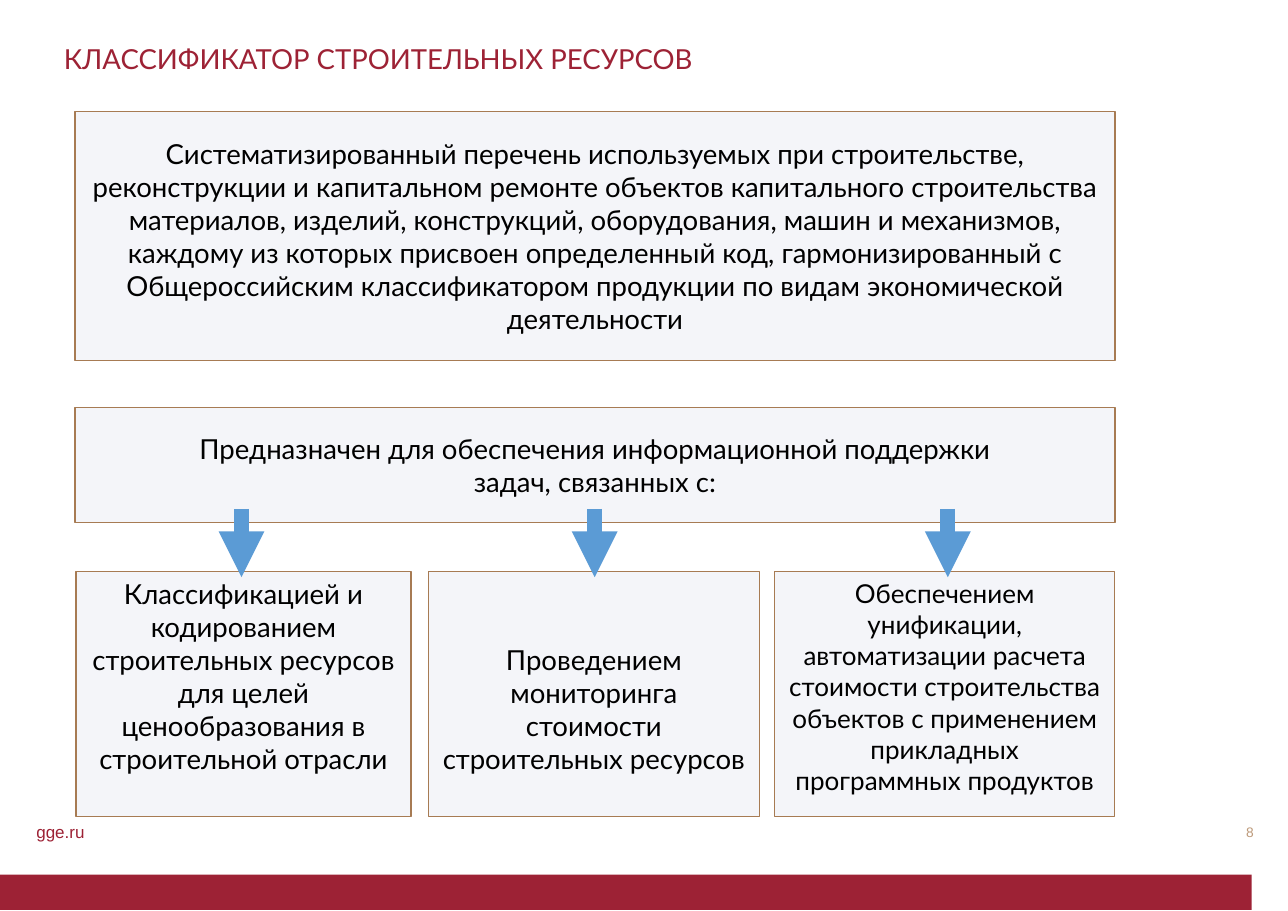
from dataclasses import dataclass

from lxml import etree
from pptx import Presentation, util as u
from pptx.dml.color import RGBColor
from pptx.enum import shapes, text
from pptx.oxml import ns

WIDTH, HEIGHT = u.Inches(11.69), u.Inches(8.27)


@dataclass(frozen=True)
class Theme:
    accent: str = "9D2235"
    panel: str = "F4F5F9"
    border: str = "A77B53"
    arrow: str = "5B9BD5"
    number: str = "BD9A7A"
    ink: str = "000000"
    white: str = "FFFFFF"
    body_font: str = "Lato"
    footer_font: str = "Arial"
    body_size: float = 18
    dense_size: float = 17
    address_size: float = 11.1
    number_size: float = 9


THEME = Theme()


@dataclass(frozen=True)
class Area:
    """A rectangle in percent of the slide's width and height."""
    left: float
    top: float
    width: float
    height: float

    def emu(self) -> tuple:
        return (share_x(self.left), share_y(self.top),
                share_x(self.width), share_y(self.height))


@dataclass(frozen=True)
class Panel:
    area: Area
    lines: tuple
    size: float = THEME.body_size
    anchor: text.MSO_ANCHOR = text.MSO_ANCHOR.TOP
    top_inset: float = 0.05


WIDE_LEFT, WIDE_WIDTH = 5.82, 80.75
TASK_TOP, TASK_HEIGHT = 62.76, 26.84
ARROW_START, ARROW_STEP = 18.75, 27.42
ARROW_TOP, ARROW_BOTTOM = 55.86, 63.36

PANELS = (
    Panel(Area(WIDE_LEFT, 12.21, WIDE_WIDTH, 27.33),
          ("Систематизированный перечень используемых при строительстве, "
           "реконструкции и капитальном ремонте объектов капитального "
           "строительства материалов, изделий, конструкций, оборудования, "
           "машин и механизмов, каждому из которых присвоен определенный код, "
           "гармонизированный с Общероссийским классификатором продукции по "
           "видам экономической деятельности",),
          anchor=text.MSO_ANCHOR.MIDDLE),
    Panel(Area(WIDE_LEFT, 44.74, WIDE_WIDTH, 12.58),
          ("Предназначен для обеспечения информационной поддержки",
           "задач, связанных с:"),
          anchor=text.MSO_ANCHOR.MIDDLE),
    Panel(Area(5.9, TASK_TOP, 26.01, TASK_HEIGHT),
          ("Классификацией и кодированием строительных ресурсов для целей "
           "ценообразования в строительной отрасли",)),
    Panel(Area(33.28, TASK_TOP, 25.66, TASK_HEIGHT),
          ("Проведением мониторинга стоимости строительных ресурсов",),
          top_inset=0.65),
    Panel(Area(60.14, TASK_TOP, 26.43, TASK_HEIGHT),
          ("Обеспечением унификации, автоматизации расчета стоимости "
           "строительства объектов с применением прикладных программных "
           "продуктов",), size=THEME.dense_size),
)


def share_x(percent: float) -> int:
    return round(WIDTH * percent / 100)


def share_y(percent: float) -> int:
    return round(HEIGHT * percent / 100)


def write(shape, *lines: str, font: str = THEME.body_font,
          size: float = THEME.body_size, color: str = THEME.ink,
          align=text.PP_ALIGN.LEFT, anchor=text.MSO_ANCHOR.TOP,
          spacing=None, insets: tuple = (0, 0, 0, 0)) -> None:
    """Insets are left, top, right, bottom in inches; spacing is in points."""
    frame = shape.text_frame
    frame.word_wrap = True
    frame.auto_size = text.MSO_AUTO_SIZE.NONE
    frame.vertical_anchor = anchor
    (frame.margin_left, frame.margin_top,
     frame.margin_right, frame.margin_bottom) = map(u.Inches, insets)
    for index, line in enumerate(lines):
        paragraph = frame.add_paragraph() if index else frame.paragraphs[0]
        paragraph.alignment = align
        if spacing:
            paragraph.line_spacing = u.Pt(spacing)
        run = paragraph.add_run()
        run.text = line
        run.font.name = font
        run.font.size = u.Pt(size)
        run.font.color.rgb = RGBColor.from_string(color)


def add_box(slide, area: Area, fill: str, border: str = ""):
    shape = slide.shapes.add_shape(shapes.MSO_SHAPE.RECTANGLE, *area.emu())
    shape.shadow.inherit = False
    shape.fill.solid()
    shape.fill.fore_color.rgb = RGBColor.from_string(fill)
    if border:
        shape.line.color.rgb = RGBColor.from_string(border)
        shape.line.width = u.Pt(0.75)
    else:
        shape.line.fill.background()
    return shape


def add_panel(slide, panel: Panel) -> None:
    shape = add_box(slide, panel.area, THEME.panel, THEME.border)
    write(shape, *panel.lines, size=panel.size, align=text.PP_ALIGN.CENTER,
          anchor=panel.anchor, insets=(0.1, panel.top_inset, 0.1, 0.05))


def add_arrow(slide, column: float) -> None:
    arrow = slide.shapes.add_connector(
        shapes.MSO_CONNECTOR.STRAIGHT, share_x(column), share_y(ARROW_TOP),
        share_x(column), share_y(ARROW_BOTTOM))
    arrow.line.color.rgb = RGBColor.from_string(THEME.arrow)
    arrow.line.width = u.Pt(10)
    etree.SubElement(arrow.line._get_or_add_ln(), ns.qn("a:tailEnd"),
                     type="triangle")
    etree.SubElement(arrow._element.spPr, ns.qn("a:effectLst"))


def add_title(slide) -> None:
    title = slide.shapes.title
    title.left, title.top, title.width, title.height = Area(
        4.96, 4.84, 88.71, 6.53).emu()
    write(title, "КЛАССИФИКАТОР СТРОИТЕЛЬНЫХ РЕСУРСОВ",
          color=THEME.accent, spacing=20)


def add_footer(slide) -> None:
    add_box(slide, Area(0, 96.01, 97.18, 3.87), THEME.accent)
    address = add_box(slide, Area(2.82, 90.08, 9.07, 2.54), THEME.white)
    write(address, "gge.ru", font=THEME.footer_font, size=THEME.address_size,
          color=THEME.accent, anchor=text.MSO_ANCHOR.MIDDLE)
    number = slide.shapes.add_textbox(*Area(95.3, 90.45, 2.05, 3.75).emu())
    write(number, "8", font=THEME.footer_font, size=THEME.number_size,
          color=THEME.number, align=text.PP_ALIGN.RIGHT, spacing=10.8)


def main() -> None:
    presentation = Presentation()
    presentation.slide_width, presentation.slide_height = WIDTH, HEIGHT
    slide = presentation.slides.add_slide(presentation.slide_layouts[5])
    add_title(slide)
    add_footer(slide)
    for panel in PANELS:
        add_panel(slide, panel)
    for index in range(3):
        add_arrow(slide, ARROW_START + index * ARROW_STEP)
    presentation.save("out.pptx")


if __name__ == "__main__":
    main()
